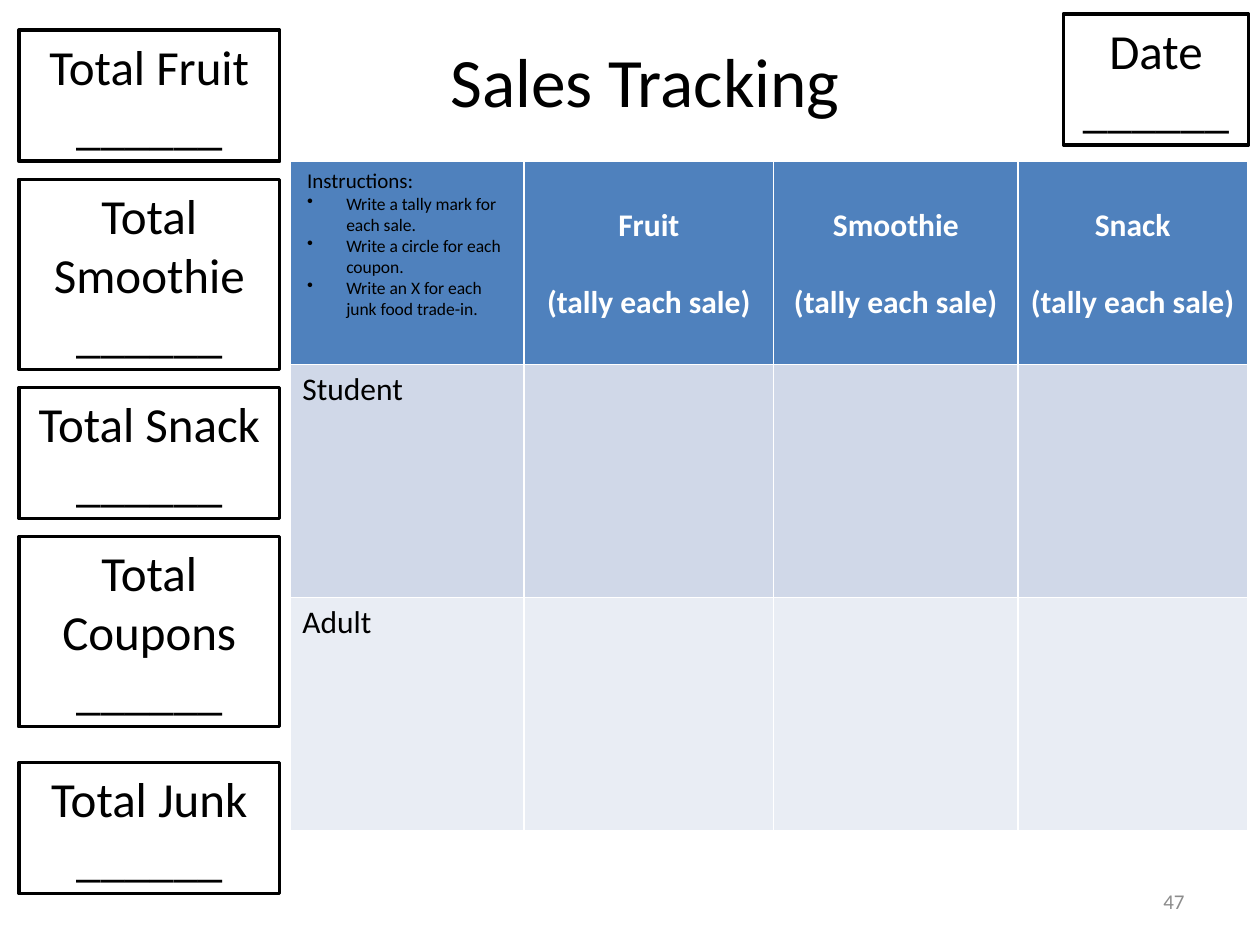
"""Build a sales tracking sheet with a tally table and boxes for totals."""
from pptx import Presentation
from pptx.dml.color import RGBColor
from pptx.enum.shapes import MSO_SHAPE
from pptx.enum.text import MSO_ANCHOR, MSO_AUTO_SIZE, PP_ALIGN
from pptx.oxml.ns import qn
from pptx.util import Inches, Pt

RECTANGLE = MSO_SHAPE.RECTANGLE
LEFT, CENTER, RIGHT = PP_ALIGN.LEFT, PP_ALIGN.CENTER, PP_ALIGN.RIGHT
TOP, MIDDLE = MSO_ANCHOR.TOP, MSO_ANCHOR.MIDDLE
GROW = MSO_AUTO_SIZE.SHAPE_TO_FIT_TEXT
BLACK = RGBColor(0x00, 0x00, 0x00)
WHITE = RGBColor(0xFF, 0xFF, 0xFF)
GRAY = RGBColor(0x8C, 0x8C, 0x8C)
BLUE = RGBColor(0x4F, 0x81, 0xBD)
ROW_FILLS = [BLUE, RGBColor(0xD0, 0xD8, 0xE8), RGBColor(0xE9, 0xED, 0xF4)]
FONT = "Calibri"
BLANK = "______"

deck = Presentation()
deck.slide_width, deck.slide_height = Inches(10), Inches(7.5)
COLUMN, ROW = deck.slide_width / 100, deck.slide_height / 100
page = deck.slides.add_slide(deck.slide_layouts[6])


def place(left, top, width, height):
    return [round(left * COLUMN), round(top * ROW),
            round(width * COLUMN), round(height * ROW)]


def write(frame, lines, size=18, color=BLACK, bold=False, align=LEFT,
          anchor=TOP, gap=0, bullet=False):
    frame.word_wrap = True
    frame.vertical_anchor = anchor
    for index, line in enumerate(lines):
        first = index == 0 and not frame.text
        para = frame.paragraphs[0] if first else frame.add_paragraph()
        para.alignment = align
        if index:
            para.space_before = Pt(gap)
        if bullet:
            properties = para._p.get_or_add_pPr()
            properties.set("marL", str(Inches(0.31)))
            properties.set("indent", str(-Inches(0.31)))
            mark = properties.makeelement(qn("a:buChar"), {"char": "•"})
            properties.append(mark)
        span = para.add_run()
        span.text = line
        span.font.name, span.font.size = FONT, Pt(size)
        span.font.bold, span.font.color.rgb = bold, color


title = page.shapes.add_textbox(*place(33.6, 0.13, 35.2, 16.67))
write(title.text_frame, ["Sales Tracking"], size=39.6, align=CENTER, anchor=MIDDLE)

column_widths = [18.6, 19.8, 19.4, 18.2]
row_heights = [21.5, 24.65, 24.65]
area = place(23, 17.07, sum(column_widths), sum(row_heights))
table = page.shapes.add_table(len(row_heights), len(column_widths), *area).table
for column, width in zip(table.columns, column_widths):
    column.width = round(width * COLUMN)
for row, height, fill in zip(table.rows, row_heights, ROW_FILLS):
    row.height = round(height * ROW)
    for cell in row.cells:
        cell.fill.solid()
        cell.fill.fore_color.rgb = fill
for index, product in enumerate(["Fruit", "Smoothie", "Snack"], start=1):
    heading = table.cell(0, index)
    heading.margin_top = round(4.8 * ROW)
    write(heading.text_frame, [product, "(tally each sale)"], color=WHITE,
          bold=True, align=CENTER, gap=22)
for index, buyer in enumerate(["Student", "Adult"], start=1):
    write(table.cell(index, 0).text_frame, [buyer])

instructions = page.shapes.add_textbox(*place(23.4, 17.07, 18, 17.47)).text_frame
write(instructions, ["Instructions:"], size=12)
write(instructions, ["Write a tally mark for each sale.",
                     "Write a circle for each coupon.",
                     "Write an X for each junk food trade-in."],
      size=10, bullet=True)

SHORT, TALL, GAP = 13.87, 20.13, 1.9
boxes = [(["Date", BLANK], 84.4, 1.47, 14.7, SHORT)]
top = 3.2
for lines, height, gap in [(["Total Fruit", BLANK], SHORT, GAP),
                           (["Total Smoothie", BLANK], TALL, GAP),
                           (["Total Snack", BLANK], SHORT, GAP),
                           (["Total Coupons " + BLANK], TALL, 2 * GAP),
                           (["Total Junk", BLANK], SHORT, GAP)]:
    boxes.append((lines, 1.5, top, 20.7, height))
    top += height + gap
for lines, *area in boxes:
    box = page.shapes.add_shape(RECTANGLE, *place(*area))
    box.shadow.inherit = False
    box.fill.solid()
    box.fill.fore_color.rgb = WHITE
    box.line.color.rgb, box.line.width = BLACK, Pt(2)
    write(box.text_frame, lines, size=28, align=CENTER)
    box.text_frame.auto_size = GROW

number = page.shapes.add_textbox(*place(71.7, 92.67, 23.3, 5.33))
write(number.text_frame, ["47"], size=12, color=GRAY, align=RIGHT, anchor=MIDDLE)

deck.save("out.pptx")
